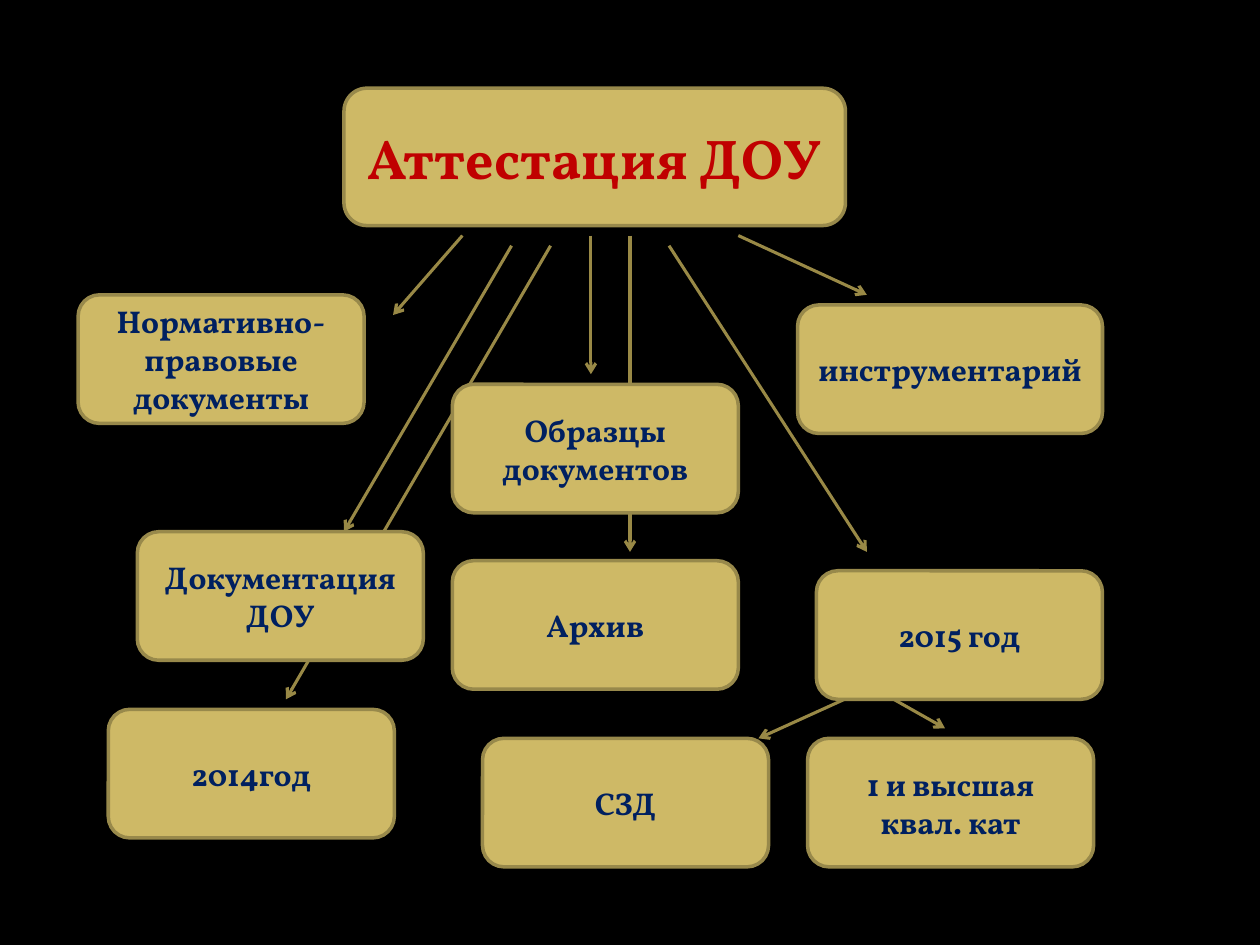
from lxml import etree
from pptx import Presentation
from pptx import util as u
from pptx.dml.color import RGBColor
from pptx.enum import shapes, text
from pptx.oxml import ns

BLACK = RGBColor(0x00, 0x00, 0x00)
GOLD = RGBColor(0xCE, 0xB9, 0x66)
BORDER = RGBColor(0x98, 0x89, 0x4B)
ARROW = RGBColor(0x99, 0x89, 0x46)
RED = RGBColor(0xC0, 0x00, 0x00)
NAVY = RGBColor(0x00, 0x20, 0x60)
FONT = "Vollkorn"
BOX_WIDTH, BOX_HEIGHT = 2.27, 1.02
HEADING = (2.73, 0.7, 3.98, 1.09)

ARROWS = [
    (6.95, 5.47, 7.5, 5.78),
    (6.88, 5.47, 6.02, 5.86),
    (5, 1.87, 5, 4.38),
    (4.37, 1.95, 2.27, 5.55),
    (3.67, 1.87, 3.12, 2.5),
    (4.06, 1.95, 2.73, 4.22),
    (4.69, 1.87, 4.69, 2.97),
    (5.86, 1.87, 6.88, 2.34),
    (5.31, 1.95, 6.88, 4.38),
]

TOPICS = [
    ("Нормативно-правовые документы", 0.62, 2.34, BOX_WIDTH),
    ("инструментарий", 6.33, 2.42, 2.42),
    ("Образцы документов", 3.59, 3.05, BOX_WIDTH),
    ("2015 год", 6.48, 4.53, BOX_WIDTH),
    ("2014год", 0.86, 5.63, BOX_WIDTH),
    ("СЗД", 3.83, 5.86, BOX_WIDTH),
    ("1 и высшая квал. кат", 6.41, 5.86, BOX_WIDTH),
    ("Документация ДОУ", 1.09, 4.22, BOX_WIDTH),
    ("Архив", 3.59, 4.45, BOX_WIDTH),
]


def write_text(shape, words, size=18, color=NAVY):
    """Put one centred bold paragraph into a shape."""
    frame = shape.text_frame
    frame.word_wrap = True
    frame.auto_size = text.MSO_AUTO_SIZE.NONE
    frame.vertical_anchor = text.MSO_ANCHOR.MIDDLE
    para = frame.paragraphs[0]
    para.alignment = text.PP_ALIGN.CENTER
    span = para.add_run()
    span.text = words
    span.font.name = FONT
    span.font.size = u.Pt(size)
    span.font.bold = True
    span.font.color.rgb = color


def add_box(page, left, top, width, height):
    """Add a gold rounded box."""
    box = page.shapes.add_shape(
        shapes.MSO_SHAPE.ROUNDED_RECTANGLE,
        *map(u.Inches, (left, top, width, height)))
    box.shadow.inherit = False
    box.fill.solid()
    box.fill.fore_color.rgb = GOLD
    box.line.color.rgb = BORDER
    box.line.width = u.Pt(2)
    return box


def add_arrow(page, *ends):
    """Add a straight line with an open arrowhead at its end."""
    arrow = page.shapes.add_connector(
        shapes.MSO_CONNECTOR.STRAIGHT, *map(u.Inches, ends))
    arrow.line.color.rgb = ARROW
    arrow.line.width = u.Pt(1.75)
    properties = arrow.line._get_or_add_ln()
    etree.SubElement(properties, ns.qn("a:tailEnd"), type="arrow")
    etree.SubElement(arrow._element.spPr, ns.qn("a:effectLst"))


def add_heading(page, words):
    """Place the title on a gold box."""
    panel = add_box(page, *HEADING)
    title = page.shapes.title
    title.left, title.top, title.width, title.height = map(u.Inches, HEADING)
    write_text(title, words, size=32, color=RED)
    panel._element.addnext(title._element)


def main():
    """Build the slide and save it."""
    deck = Presentation()
    deck.slide_width, deck.slide_height = u.Inches(10), u.Inches(7.5)
    page = deck.slides.add_slide(deck.slide_layouts.get_by_name("Title Only"))
    page.background.fill.solid()
    page.background.fill.fore_color.rgb = BLACK
    for ends in ARROWS:
        add_arrow(page, *ends)
    add_heading(page, "Аттестация ДОУ")
    for words, left, top, width in TOPICS:
        write_text(add_box(page, left, top, width, BOX_HEIGHT), words)
    deck.save("out.pptx")


main()
